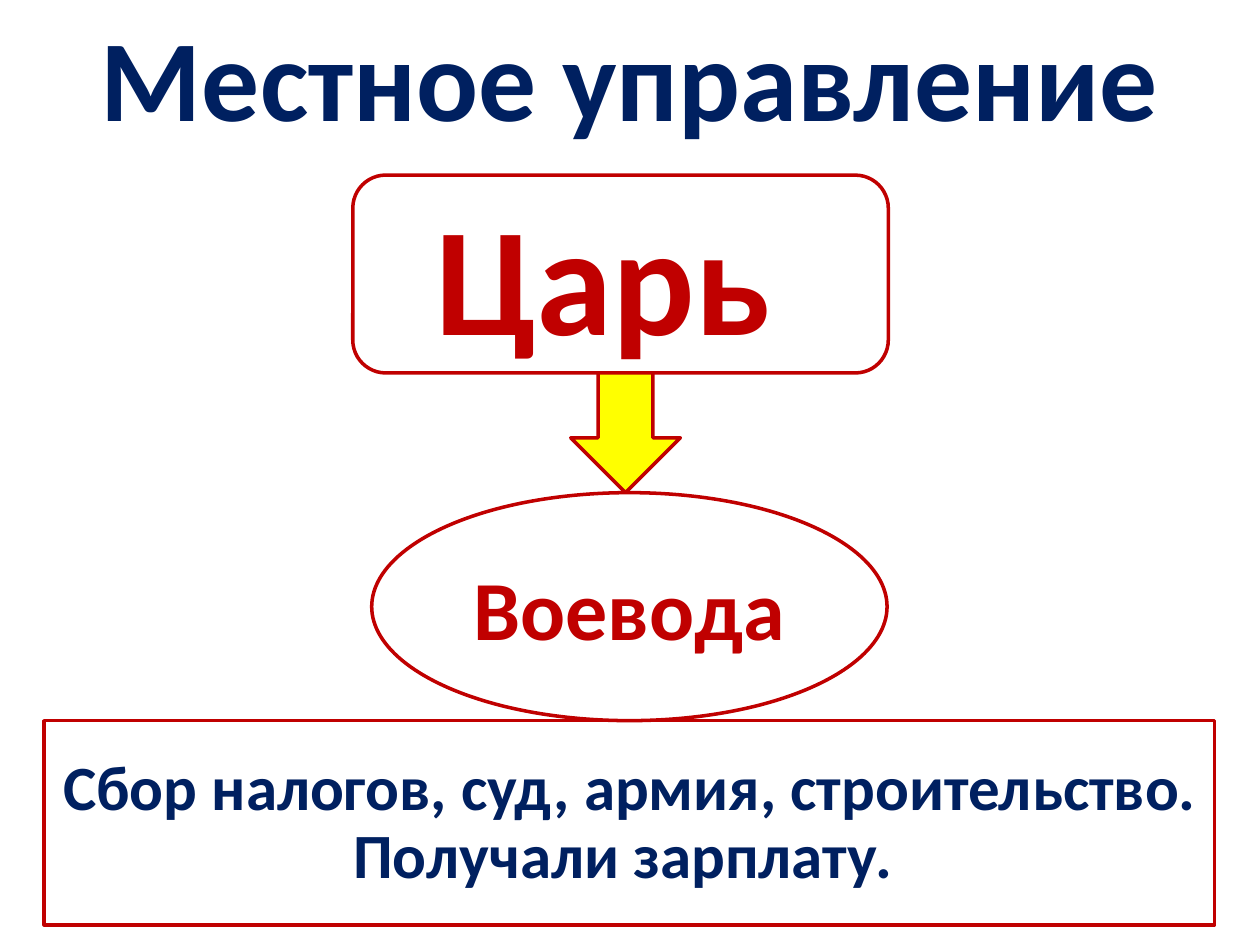
"""Build a slide showing the chain of local government from tsar to voivode."""
from pptx import Presentation
from pptx import util as u
from pptx.dml.color import RGBColor
from pptx.enum import shapes, text

WIDTH, HEIGHT = 10, 7.5
FONT = "Calibri"
COLORS = {"navy": "002060", "red": "C00000", "yellow": "FFFF00"}
KIND = shapes.MSO_SHAPE

TITLE = ("Местное управление", 66, "navy")
TSAR = ("Царь ", 88, "red")
VOIVODE = ("Воевода", 48, "red")
DUTIES = ("Сбор налогов, суд, армия, строительство. Получали зарплату. ", 36, "navy")

TITLE_HEIGHT = 1.21
CHAIN_TOP = 1.39
CHAIN = [
    (KIND.ROUNDED_RECTANGLE, 2.8, 4.25, 1.57, None, TSAR),
    (KIND.DOWN_ARROW, 4.53, 0.87, 0.95, "yellow", None),
    (KIND.OVAL, 2.95, 4.09, 1.81, None, VOIVODE),
    (KIND.RECTANGLE, 0.35, 9.29, 1.62, None, None),
]
DUTIES_TOP, DUTIES_HEIGHT = 5.95, 1.19


def color(name):
    return RGBColor.from_string(COLORS[name])


def inches(*lengths):
    return [u.Inches(length) for length in lengths]


def write(box, content, anchor, spacing=None):
    words, size, shade = content
    frame = box.text_frame
    frame.word_wrap = True
    frame.vertical_anchor = anchor
    para = frame.paragraphs[0]
    para.alignment = text.PP_ALIGN.CENTER
    para.line_spacing = spacing
    span = para.add_run()
    span.text = words
    span.font.name = FONT
    span.font.size = u.Pt(size)
    span.font.bold = True
    span.font.color.rgb = color(shade)


def add_text(page, top, height, content, spacing=None):
    box = page.shapes.add_textbox(*inches(0, top, WIDTH, height))
    write(box, content, text.MSO_ANCHOR.TOP, spacing)


def add_outline(page, kind, area, fill, content):
    shape = page.shapes.add_shape(kind, *inches(*area))
    shape.shadow.inherit = False
    if fill:
        shape.fill.solid()
        shape.fill.fore_color.rgb = color(fill)
    else:
        shape.fill.background()
    shape.line.color.rgb = color("red")
    shape.line.width = u.Pt(2)
    if content:
        write(shape, content, text.MSO_ANCHOR.MIDDLE)


def main():
    deck = Presentation()
    deck.slide_width, deck.slide_height = inches(WIDTH, HEIGHT)
    page = deck.slides.add_slide(deck.slide_layouts[6])
    add_text(page, 0, TITLE_HEIGHT, TITLE)
    top = CHAIN_TOP
    for kind, left, width, height, fill, content in CHAIN:
        add_outline(page, kind, (left, top, width, height), fill, content)
        top += height
    add_text(page, DUTIES_TOP, DUTIES_HEIGHT, DUTIES, 0.9)
    deck.save("out.pptx")


if __name__ == "__main__":
    main()
